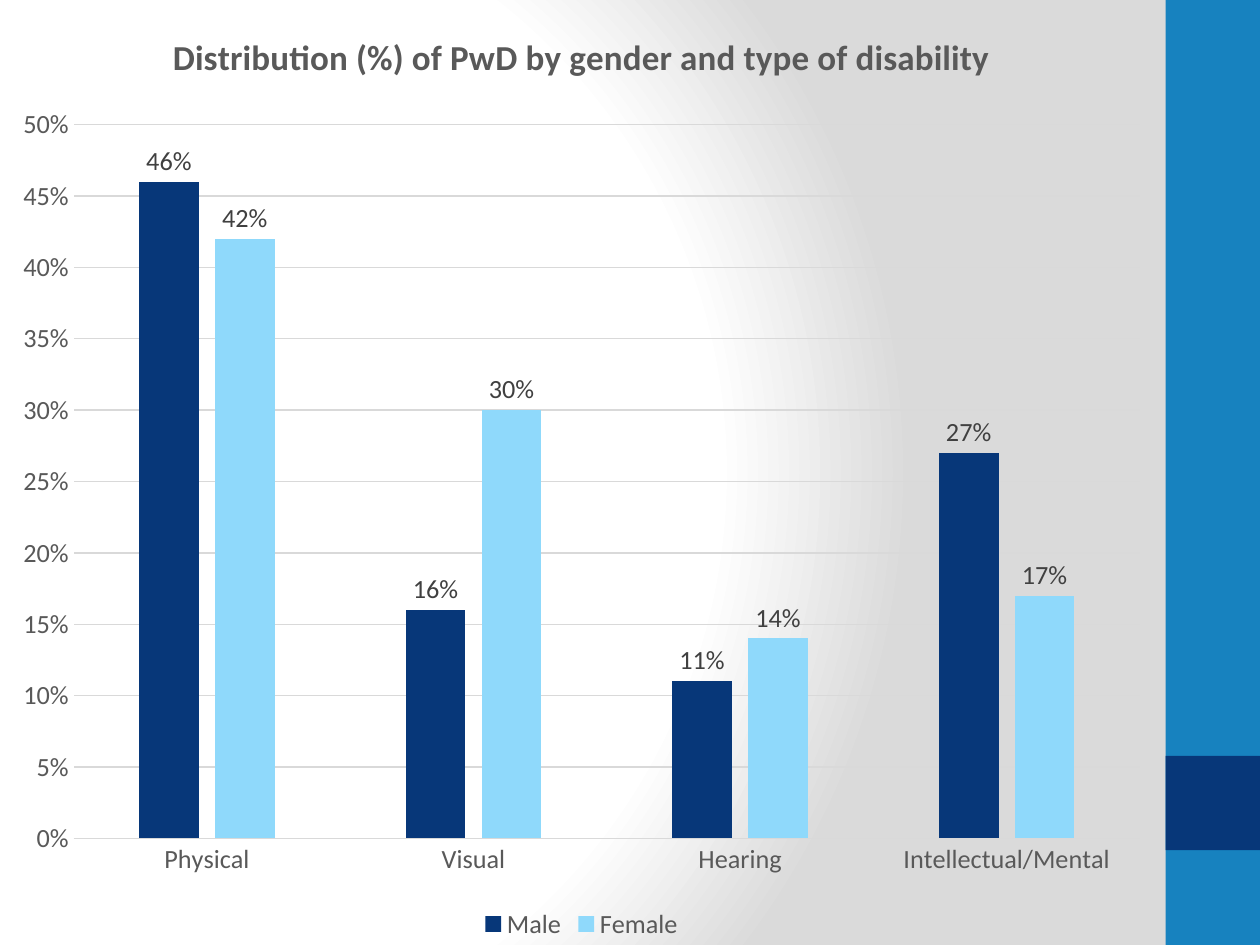
from pptx import Presentation
from pptx.chart.data import CategoryChartData
from pptx.dml.color import RGBColor
from pptx.enum import chart as ch, shapes
from pptx.oxml import parse_xml
from pptx.oxml.ns import nsdecls
from pptx.util import Cm, Pt

# Content
TITLE = "Distribution (%) of PwD by gender and type of disability"
KINDS = ["Physical", "Visual", "Hearing", "Intellectual/Mental"]
SERIES = [
    ("Male", [0.46, 0.16, 0.11, 0.27], "navy"),
    ("Female", [0.42, 0.30, 0.14, 0.17], "sky"),
]

# Theme
THEME = {
    "font": "Calibri",
    "navy": "073779", "sky": "8FD9FB", "blue": "1782BF",
    "text": "595959", "label": "404040", "grid": "D9D9D9",
    "light": "FFFFFF", "shade": "DADADA",
    "title": 20, "body": 15,
}
WIDE, HIGH = 25.4, 19.05
BAND = 1.9
BLOCK_TOP = 15.24


def color(name):
    return RGBColor.from_string(THEME[name])


def style(font, size="body", tone="text", bold=False):
    font.name, font.size, font.bold = THEME["font"], Pt(THEME[size]), bold
    font.color.rgb = color(tone)


def rule(line):
    line.color.rgb, line.width = color("grid"), Pt(0.75)


def add_block(slide, top, height, tone):
    box = slide.shapes.add_shape(shapes.MSO_SHAPE.RECTANGLE, Cm(WIDE - BAND),
                                 Cm(top), Cm(BAND), Cm(height))
    box.shadow.inherit = False
    box.fill.solid()
    box.fill.fore_color.rgb = color(tone)
    box.line.fill.background()


def set_back(slide):
    stops = "".join(
        f'<a:gs pos="{at * 1000}"><a:srgbClr val="{THEME[tone]}"/></a:gs>'
        for at, tone in [(0, "light"), (75, "light"), (100, "shade")])
    slide.element.cSld.insert(0, parse_xml(
        f'<p:bg {nsdecls("p", "a")}><p:bgPr><a:gradFill rotWithShape="1">'
        f'<a:gsLst>{stops}</a:gsLst><a:path path="circle">'
        '<a:fillToRect l="20000" t="50000" r="100000" b="50000"/></a:path>'
        '</a:gradFill><a:effectLst/></p:bgPr></p:bg>'))


def add_columns(slide):
    data = CategoryChartData(number_format="0%")
    data.categories = KINDS
    for name, vals, _ in SERIES:
        data.add_series(name, vals)
    chart = slide.shapes.add_chart(
        ch.XL_CHART_TYPE.COLUMN_CLUSTERED, 0, 0,
        Cm(WIDE - BAND - 0.05), Cm(HIGH), data).chart
    style(chart.font)

    # Title and legend
    chart.has_title = True
    head = chart.chart_title
    head.include_in_layout = False
    head.text_frame.text = TITLE
    style(head.text_frame.paragraphs[0].runs[0].font, "title", bold=True)
    chart.has_legend = True
    chart.legend.position = ch.XL_LEGEND_POSITION.BOTTOM
    chart.legend.include_in_layout = False
    style(chart.legend.font)

    # Axes
    cat, val = chart.category_axis, chart.value_axis
    for axis in (cat, val):
        axis.major_tick_mark = axis.minor_tick_mark = ch.XL_TICK_MARK.NONE
        style(axis.tick_labels.font)
    rule(cat.format.line)
    val.format.line.fill.background()
    val.has_major_gridlines = True
    rule(val.major_gridlines.format.line)
    val.minimum_scale, val.maximum_scale, val.major_unit = 0, 0.5, 0.05
    val.tick_labels.number_format = "0%"
    val.tick_labels.number_format_is_linked = False

    # Columns and their labels
    plot = chart.plots[0]
    plot.gap_width, plot.overlap, plot.vary_by_categories = 219, -27, False
    for bars, (_, _, tone) in zip(plot.series, SERIES):
        bars.invert_if_negative = False
        bars.format.fill.solid()
        bars.format.fill.fore_color.rgb = color(tone)
        tags = bars.data_labels
        tags.show_value = True
        tags.position = ch.XL_LABEL_POSITION.OUTSIDE_END
        tags.number_format, tags.number_format_is_linked = "0%", False
        style(tags.font, tone="label")


def main():
    deck = Presentation()
    deck.slide_width, deck.slide_height = Cm(WIDE), Cm(HIGH)
    slide = deck.slides.add_slide(deck.slide_layouts[6])
    set_back(slide)
    add_block(slide, 0, HIGH, "blue")
    add_block(slide, BLOCK_TOP, BAND, "navy")
    add_columns(slide)
    deck.save("out.pptx")


if __name__ == "__main__":
    main()
